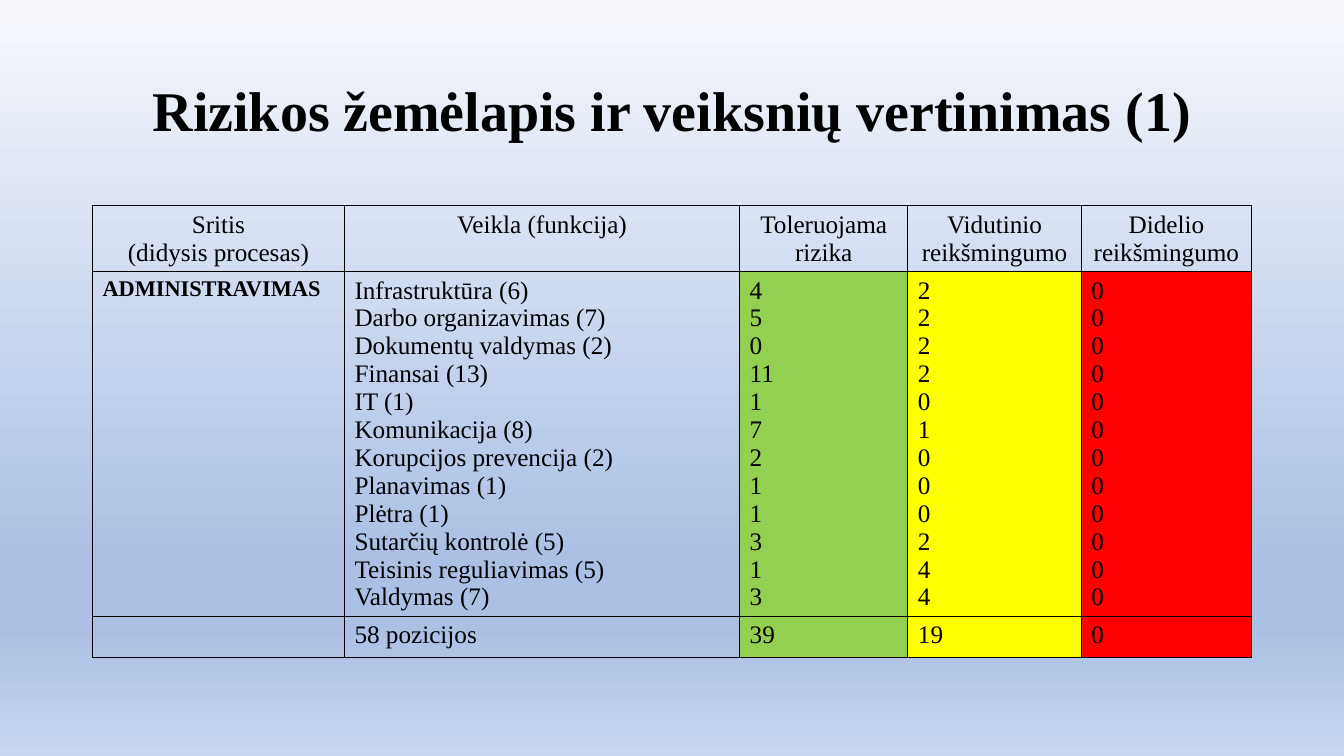
import lxml.etree
import pptx
import pptx.dml.color
import pptx.enum.text
import pptx.oxml
import pptx.oxml.ns
import pptx.util

Cm = pptx.util.Cm
Pt = pptx.util.Pt
RGBColor = pptx.dml.color.RGBColor
ALIGN = pptx.enum.text.PP_ALIGN
qn = pptx.oxml.ns.qn

BLACK = RGBColor(0x00, 0x00, 0x00)
GREEN = RGBColor(0x92, 0xD0, 0x50)
YELLOW = RGBColor(0xFF, 0xFF, 0x00)
RED = RGBColor(0xFF, 0x00, 0x00)
SKY = [(0, RGBColor(0xF6, 0xF8, 0xFC)), (74, RGBColor(0xAB, 0xC0, 0xE4)),
       (83, RGBColor(0xAB, 0xC0, 0xE4)), (100, RGBColor(0xC7, 0xD5, 0xED))]

HEADERS = ["Sritis\n(didysis procesas)", "Veikla (funkcija)", "Toleruojama rizika",
           "Vidutinio reikšmingumo", "Didelio reikšmingumo"]
# Activity with its tolerable, medium and high risk counts
ACTIVITIES = [
    ("Infrastruktūra", 4, 2, 0),
    ("Darbo organizavimas", 5, 2, 0),
    ("Dokumentų valdymas", 0, 2, 0),
    ("Finansai", 11, 2, 0),
    ("IT", 1, 0, 0),
    ("Komunikacija", 7, 1, 0),
    ("Korupcijos prevencija", 2, 0, 0),
    ("Planavimas", 1, 0, 0),
    ("Plėtra", 1, 0, 0),
    ("Sutarčių kontrolė", 3, 2, 0),
    ("Teisinis reguliavimas", 1, 4, 0),
    ("Valdymas", 3, 4, 0),
]
COLUMN_FILLS = [None, None, GREEN, YELLOW, RED]
COLUMN_WIDTHS = [6.35, 9.96, 4.24, 4.37, 4.29]
ROW_HEIGHTS = [1.66, 8.69, 1.04]


class RiskSlide:
    font_name = "Times New Roman"
    text_color = BLACK
    body_size = 18
    border_width = Pt(1)

    def __init__(self, presentation):
        self.slide = presentation.slides.add_slide(presentation.slide_layouts[5])

    def background(self, stops):
        fill = self.slide.background.fill
        fill.gradient()
        fill.gradient_angle = 270
        stop_list = fill._fill._gradFill.find(qn("a:gsLst"))
        for stop in list(stop_list):
            stop_list.remove(stop)
        for position, color in stops:
            stop = lxml.etree.SubElement(stop_list, qn("a:gs"), pos=str(position * 1000))
            lxml.etree.SubElement(stop, qn("a:srgbClr"), val=str(color))

    def style(self, paragraph, size, bold=False, align=ALIGN.LEFT):
        paragraph.alignment = align
        font = paragraph.font
        font.name, font.size, font.bold = self.font_name, Pt(size), bold
        font.color.rgb = self.text_color

    def title(self, text):
        title = self.slide.shapes.title
        title.left, title.top, title.width, title.height = Cm(2.33), Cm(1.01), Cm(29.21), Cm(3.68)
        frame = title.text_frame
        frame.text = text
        frame.word_wrap = True
        frame.vertical_anchor = pptx.enum.text.MSO_ANCHOR.MIDDLE
        self.style(frame.paragraphs[0], 40, bold=True, align=ALIGN.CENTER)
        frame.paragraphs[0].line_spacing = 0.9

    def border(self, cell):
        properties = cell._tc.get_or_add_tcPr()
        for index, side in enumerate(("a:lnL", "a:lnR", "a:lnT", "a:lnB")):
            line = properties.makeelement(qn(side), {"w": str(self.border_width)})
            solid = lxml.etree.SubElement(line, qn("a:solidFill"))
            lxml.etree.SubElement(solid, qn("a:srgbClr"), val=str(self.text_color))
            properties.insert(index, line)

    def cell(self, cell, text, fill=None, size=body_size, bold=False, align=ALIGN.LEFT):
        cell.text = text
        for paragraph in cell.text_frame.paragraphs:
            self.style(paragraph, size, bold, align)
        if fill is None:
            cell.fill.background()
        else:
            cell.fill.solid()
            cell.fill.fore_color.rgb = fill
        self.border(cell)

    def risk_table(self):
        risk_map = self.slide.shapes.add_table(
            len(ROW_HEIGHTS), len(COLUMN_WIDTHS), Cm(2.33), Cm(5.18),
            Cm(sum(COLUMN_WIDTHS)), Cm(sum(ROW_HEIGHTS))).table
        risk_map.first_row = risk_map.horz_banding = False
        for column, width in zip(risk_map.columns, COLUMN_WIDTHS):
            column.width = Cm(width)
        for row, height in zip(risk_map.rows, ROW_HEIGHTS):
            row.height = Cm(height)

        names, *risk_counts = zip(*ACTIVITIES)
        totals = [sum(counts) for counts in risk_counts]
        activities = [f"{name} ({sum(counts)})" for name, *counts in ACTIVITIES]
        details = ["\n".join(map(str, lines)) for lines in (activities, *risk_counts)]
        summary = ["", f"{sum(totals)} pozicijos", *map(str, totals)]

        for column, header in enumerate(HEADERS):
            self.cell(risk_map.cell(0, column), header, align=ALIGN.CENTER)
        self.cell(risk_map.cell(1, 0), "ADMINISTRAVIMAS", size=16, bold=True)
        for column, detail in enumerate(details, start=1):
            self.cell(risk_map.cell(1, column), detail, COLUMN_FILLS[column])
        for column, total in enumerate(summary):
            self.cell(risk_map.cell(2, column), total, COLUMN_FILLS[column])


def main():
    presentation = pptx.Presentation()
    presentation.slide_width, presentation.slide_height = Cm(33.87), Cm(19.05)
    risk_slide = RiskSlide(presentation)
    risk_slide.background(SKY)
    risk_slide.title("Rizikos žemėlapis ir veiksnių vertinimas (1)")
    risk_slide.risk_table()
    presentation.save("out.pptx")


if __name__ == "__main__":
    main()
